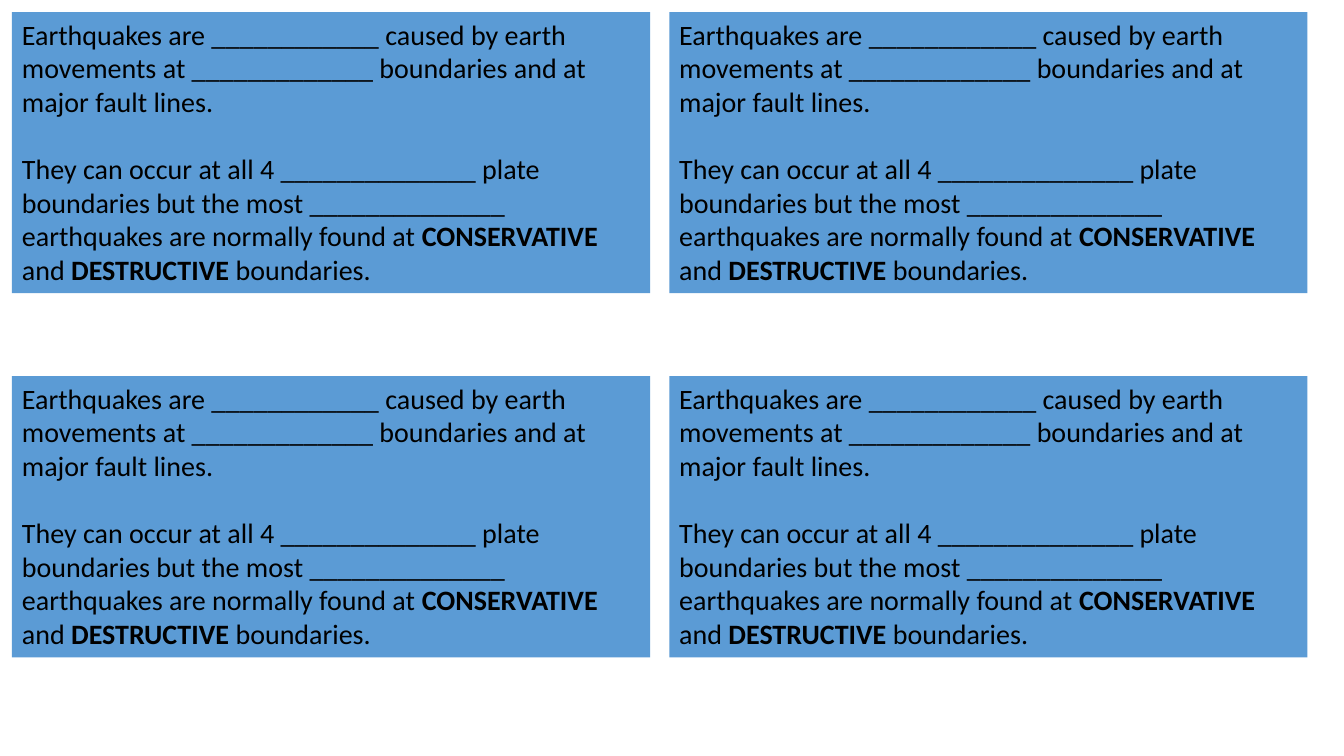
from itertools import product

from pptx import Presentation
from pptx.dml.color import RGBColor
from pptx.enum.text import MSO_AUTO_SIZE as AutoSize
from pptx.util import Pt

CARD_WIDTH, CARD_HEIGHT = 455.8, 200.9
COLUMN_LEFTS = (8.6, 478.1)
ROW_TOPS = (8.6, 268.6)

INTRODUCTION = [
    ("Earthquakes are ____________ caused by earth movements at "
     "_____________ boundaries and at major fault lines.", False),
]
BOUNDARIES = [
    ("They can occur at all 4 ______________ plate boundaries but the most "
     "______________ earthquakes are normally found at ", False),
    ("CONSERVATIVE", True),
    (" and ", False),
    ("DESTRUCTIVE", True),
    (" boundaries.", False),
]


def color(hex_value):
    return RGBColor.from_string(hex_value)


def add_text(paragraph, text, size=20, bold=False, font="Calibri", fill="000000"):
    run = paragraph.add_run()
    run.text = text
    run.font.name = font
    run.font.size = Pt(size)
    run.font.bold = bold
    run.font.color.rgb = color(fill)


presentation = Presentation()
presentation.slide_width = Pt(960)
presentation.slide_height = Pt(540)
slide = presentation.slides.add_slide(presentation.slide_layouts[6])

for left, top in product(COLUMN_LEFTS, ROW_TOPS):
    card = slide.shapes.add_textbox(Pt(left), Pt(top), Pt(CARD_WIDTH), Pt(CARD_HEIGHT))
    card.fill.solid()
    card.fill.fore_color.rgb = color("5B9BD5")
    frame = card.text_frame
    frame.word_wrap = True
    frame.auto_size = AutoSize.SHAPE_TO_FIT_TEXT

    for text, bold in INTRODUCTION:
        add_text(frame.paragraphs[0], text, bold=bold)

    boundaries = frame.add_paragraph()
    boundaries.space_before = Pt(24)
    for text, bold in BOUNDARIES:
        add_text(boundaries, text, bold=bold)

presentation.save("out.pptx")
